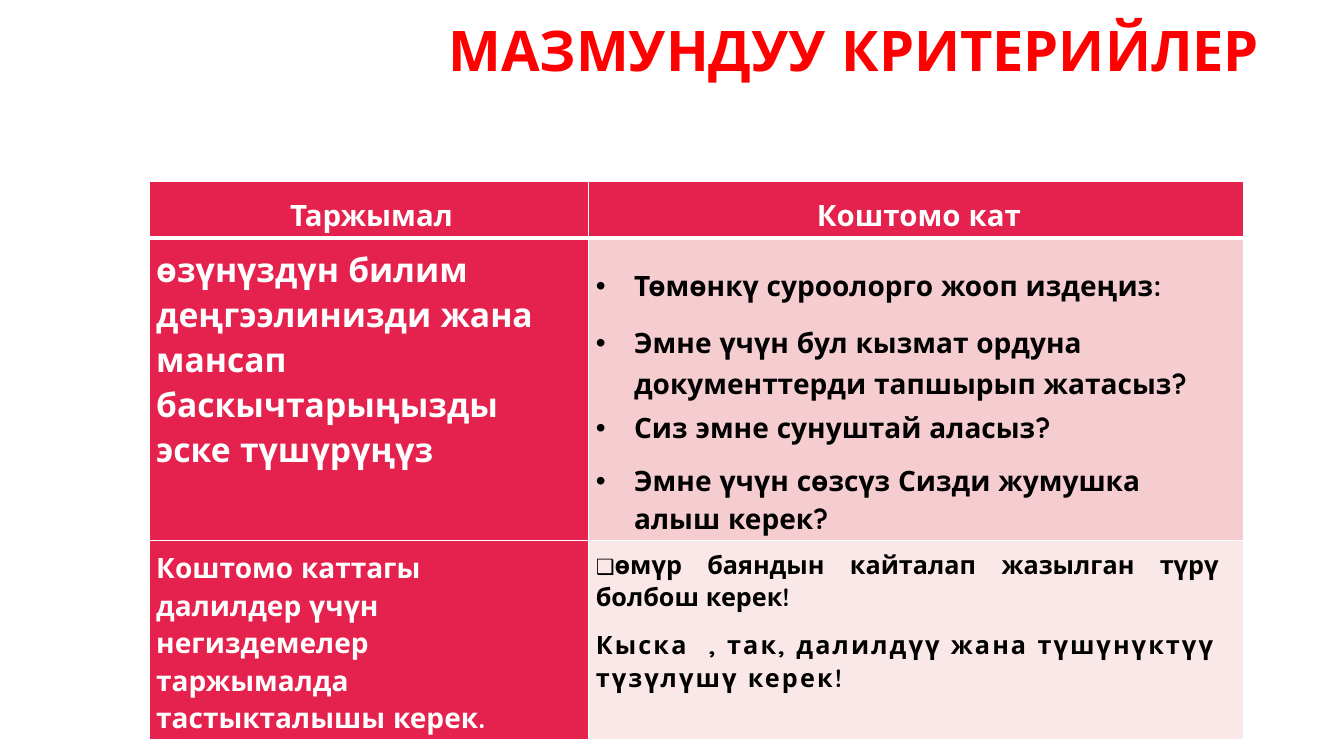
from lxml import etree
from pptx import Presentation
from pptx.dml.color import RGBColor
from pptx.enum.text import MSO_ANCHOR, MSO_AUTO_SIZE, PP_ALIGN
from pptx.oxml.ns import qn
from pptx.util import Inches, Pt

FONT = "Quicksand"
WHITE = RGBColor(0xFF, 0xFF, 0xFF)
BLACK = RGBColor(0, 0, 0)
RED = RGBColor(0xFF, 0, 0)
CRIMSON = RGBColor(0xE5, 0x22, 0x4E)
PINK = RGBColor(0xF5, 0xCD, 0xD0)
PALE_PINK = RGBColor(0xFA, 0xE8, 0xE9)
LEFT, CENTER, RIGHT, JUSTIFY = (
    PP_ALIGN.LEFT, PP_ALIGN.CENTER, PP_ALIGN.RIGHT, PP_ALIGN.JUSTIFY)
TOP, MIDDLE, BOTTOM = MSO_ANCHOR.TOP, MSO_ANCHOR.MIDDLE, MSO_ANCHOR.BOTTOM

COLUMN_WIDTHS = (4.36, 6.49)
ROW_HEIGHTS = (0.56, 3, 1.55)
HEADINGS = (("Таржымал", 0.22), ("Коштомо кат", 0.23))
EDUCATION = (
    "өзүнүздүн билим",
    "деңгээлинизди жана мансап баскычтарыңызды эске түшүрүңүз",
)
EVIDENCE = ("Коштомо каттагы далилдер үчүн негиздемелер таржымалда "
            "тастыкталышы керек.")
# Question, line spacing, space after
QUESTIONS = (
    ("Төмөнкү суроолорго жооп издеңиз:", 1.07, 10.9),
    ("Эмне үчүн бул кызмат ордуна документтерди тапшырып жатасыз?", 1.19, 4.5),
    ("Сиз эмне сунуштай аласыз?", 1.07, 10.9),
    ("Эмне үчүн сөзсүз Сизди жумушка алыш керек?", 1.07, 0),
)
# Text, letter spacing in points
BREVITY = (("Кыск", 1.5), ("а", 16),
           (", так, далилдүү жана түшүнүктүү түзүлүшү керек!", 1.5))


def add_run(paragraph, text, size, color, bold=True, tracking=0):
    run = paragraph.add_run()
    run.text = text
    font = run.font
    font.name, font.size, font.bold = FONT, Pt(size), bold
    font.color.rgb = color
    if tracking:
        run._r.get_or_add_rPr().set("spc", str(round(tracking * 100)))


def add_paragraph(frame, align=LEFT, spacing=1.07, after=0):
    """Use the empty first paragraph if there is one, else append."""
    first = frame.paragraphs[0]
    paragraph = frame.add_paragraph() if first.runs else first
    paragraph.alignment = align
    paragraph.line_spacing = spacing
    paragraph.space_after = Pt(after)
    return paragraph


def indent(paragraph, margin, first_line=0):
    properties = paragraph._p.get_or_add_pPr()
    properties.set("marL", str(Inches(margin)))
    properties.set("indent", str(Inches(first_line)))
    return properties


def add_bullet(paragraph):
    properties = indent(paragraph, 0.38, -0.38)
    color = etree.SubElement(properties, qn("a:buClr"))
    etree.SubElement(color, qn("a:srgbClr"), val=str(BLACK))
    etree.SubElement(properties, qn("a:buFont"), typeface="Arial")
    etree.SubElement(properties, qn("a:buChar"), char="•")


def set_borders(cell, top=1, bottom=1):
    properties = cell._tc.get_or_add_tcPr()
    widths = {"a:lnL": 1, "a:lnR": 1, "a:lnT": top, "a:lnB": bottom}
    for position, (side, width) in enumerate(widths.items()):
        line = etree.Element(qn(side), w=str(Pt(width)))
        fill = etree.SubElement(line, qn("a:solidFill"))
        etree.SubElement(fill, qn("a:srgbClr"), val=str(WHITE))
        properties.insert(position, line)


def prepare_cell(cell, color, anchor=TOP, top=1, bottom=1):
    """Format the cell and return its text frame."""
    cell.fill.solid()
    cell.fill.fore_color.rgb = color
    cell.vertical_anchor = anchor
    cell.margin_left, cell.margin_right = Inches(0.07), Inches(0.24)
    cell.margin_top, cell.margin_bottom = Inches(0.08), Inches(0.04)
    set_borders(cell, top, bottom)
    return cell.text_frame


def add_title(slide):
    title = slide.shapes.title
    title.left, title.top = Inches(3.17), Inches(0)
    title.width, title.height = Inches(9.42), Inches(1.8)
    frame = title.text_frame
    frame.auto_size = MSO_AUTO_SIZE.NONE
    frame.word_wrap = True
    frame.vertical_anchor = MIDDLE
    paragraph = add_paragraph(frame, RIGHT, 0.9)
    add_run(paragraph, "МАЗМУНДУУ КРИТЕРИЙЛЕР", 40, RED)
    paragraph.add_line_break()


def add_criteria_table(slide):
    table = slide.shapes.add_table(
        len(ROW_HEIGHTS), len(COLUMN_WIDTHS), Inches(1.48), Inches(1.8),
        Inches(sum(COLUMN_WIDTHS)), Inches(sum(ROW_HEIGHTS))).table
    for column, width in zip(table.columns, COLUMN_WIDTHS):
        column.width = Inches(width)
    for row, height in zip(table.rows, ROW_HEIGHTS):
        row.height = Inches(height)

    for column, (heading, margin) in enumerate(HEADINGS):
        frame = prepare_cell(table.cell(0, column), CRIMSON, BOTTOM, bottom=3)
        paragraph = add_paragraph(frame, CENTER)
        indent(paragraph, margin)
        add_run(paragraph, heading, 21, WHITE)

    education = prepare_cell(table.cell(1, 0), CRIMSON, top=3)
    for text in EDUCATION:
        add_run(add_paragraph(education), text, 24, WHITE)

    questions = prepare_cell(table.cell(1, 1), PINK, BOTTOM, top=3)
    for text, spacing, after in QUESTIONS:
        paragraph = add_paragraph(questions, LEFT, spacing, after)
        add_bullet(paragraph)
        add_run(paragraph, text, 20, BLACK)

    evidence = prepare_cell(table.cell(2, 0), CRIMSON)
    add_run(add_paragraph(evidence), EVIDENCE, 20, WHITE)

    advice = prepare_cell(table.cell(2, 1), PALE_PINK)
    repetition = add_paragraph(advice, JUSTIFY, 1.03, 9.6)
    add_run(repetition, "❑", 15, BLACK, bold=False)
    add_run(repetition, "өмүр баяндын кайталап жазылган түрү болбош керек!",
            18, BLACK)
    brevity = add_paragraph(advice)
    for text, tracking in BREVITY:
        add_run(brevity, text, 18, BLACK, tracking=tracking)


def main():
    presentation = Presentation()
    presentation.slide_width = Inches(13.33)
    presentation.slide_height = Inches(7.5)
    slide = presentation.slides.add_slide(presentation.slide_layouts[5])
    add_title(slide)
    add_criteria_table(slide)
    presentation.save("out.pptx")


if __name__ == "__main__":
    main()
